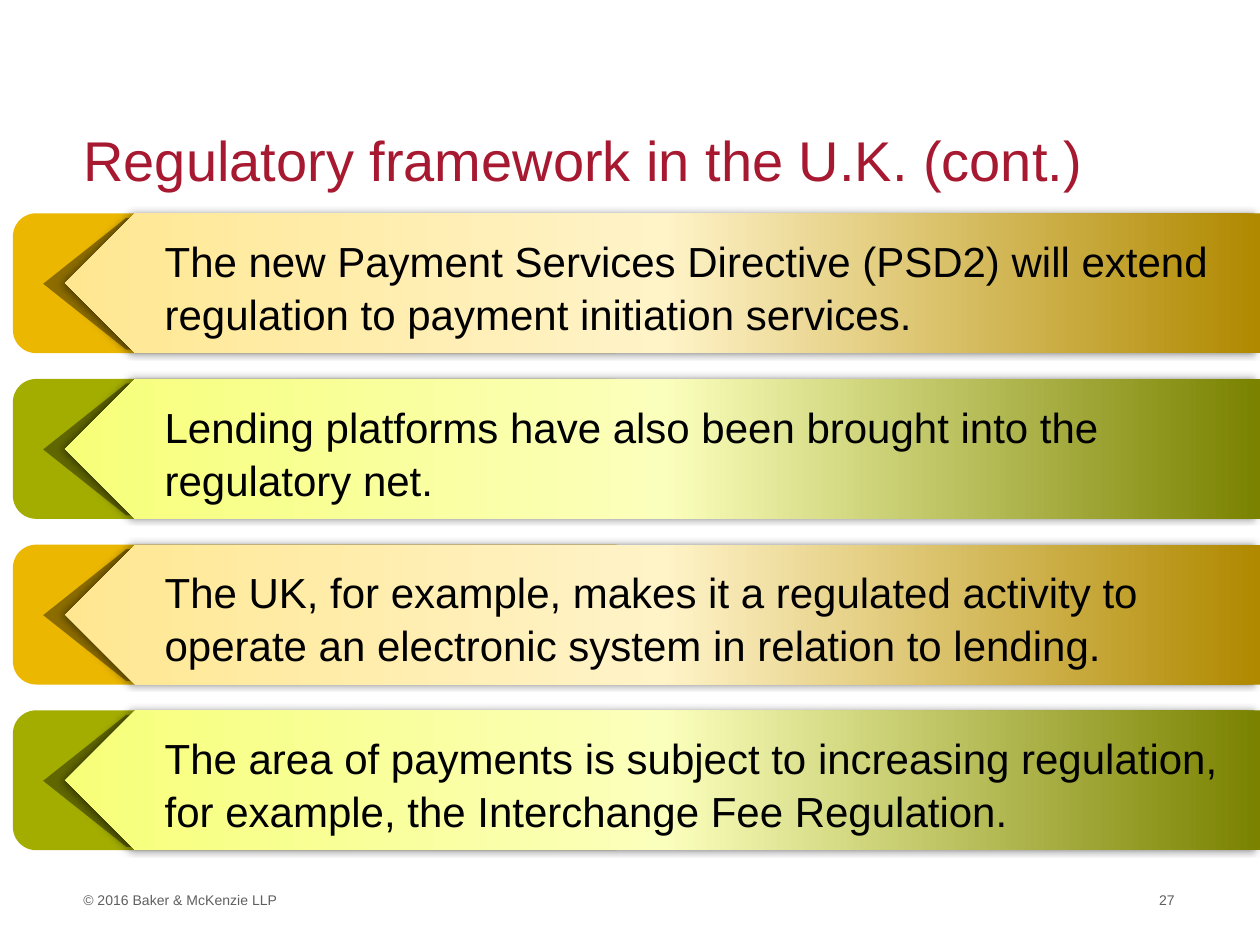
import pptx
import pptx.util
import pptx.dml.color
import pptx.enum.shapes
import pptx.enum.text
import pptx.oxml
import pptx.oxml.ns

Cm = pptx.util.Cm
Pt = pptx.util.Pt
RGBColor = pptx.dml.color.RGBColor
Shape = pptx.enum.shapes.MSO_SHAPE
Align = pptx.enum.text.PP_ALIGN
Anchor = pptx.enum.text.MSO_ANCHOR

CRIMSON = RGBColor(0xA7, 0x19, 0x30)
GREY = RGBColor(0x5F, 0x5F, 0x5F)
BLACK = RGBColor(0, 0, 0)
GOLD = RGBColor(0xEB, 0xB7, 0x00)
OLIVE = RGBColor(0xA3, 0xAD, 0x00)
GRADIENTS = {
    GOLD: (RGBColor(0xB0, 0x89, 0x00), RGBColor(0xFF, 0xF3, 0xC8), RGBColor(0xFF, 0xE7, 0x91)),
    OLIVE: (RGBColor(0x7A, 0x82, 0x00), RGBColor(0xFB, 0xFF, 0xBC), RGBColor(0xF7, 0xFF, 0x78)),
}

STATEMENTS = [
    "The new Payment Services Directive (PSD2) will extend regulation to payment initiation services.",
    "Lending platforms have also been brought into the regulatory net.",
    "The UK, for example, makes it a regulated activity to operate an electronic system in relation to lending.",
    "The area of payments is subject to increasing regulation, for example, the Interchange Fee Regulation.",
]
FIRST_TOP, ROW_PITCH, ROW_HEIGHT = 4.3, 3.34, 2.82


def write(frame, text, size=24, color=BLACK, align=Align.LEFT, spacing=1.0, inset=(0, 0), anchor=Anchor.TOP):
    """Put one formatted paragraph into a text frame."""
    frame.word_wrap = True
    frame.vertical_anchor = anchor
    frame.margin_left = frame.margin_right = Cm(inset[0])
    frame.margin_top = frame.margin_bottom = Cm(inset[1])
    para = frame.paragraphs[0]
    para.alignment = align
    para.line_spacing = spacing
    span = para.add_run()
    span.text = text
    span.font.name = "Arial"
    span.font.size = Pt(size)
    span.font.color.rgb = color


def parse_drawing(markup):
    """Turn DrawingML markup into an element."""
    namespace = pptx.oxml.ns.nsdecls("a")
    return pptx.oxml.parse_xml(markup.replace(">", f" {namespace}>", 1))


class Painter:
    """Draws the elements of one slide in a common style."""

    def __init__(self, deck):
        """Start a title-only slide."""
        self.page = deck.slides.add_slide(deck.slide_layouts[5])

    def title(self, text, *place):
        """Place and fill the title."""
        box = self.page.shapes.title
        box.left, box.top, box.width, box.height = map(Cm, place)
        write(box.text_frame, text, size=32, color=CRIMSON, anchor=Anchor.MIDDLE)

    def text(self, text, *place, **style):
        """Add a text box."""
        box = self.page.shapes.add_textbox(*map(Cm, place))
        write(box.text_frame, text, **style)

    def shape(self, group, kind, color, *place):
        """Add a plain filled shape to a group."""
        shape = group.shapes.add_shape(kind, *map(Cm, place))
        shape.shadow.inherit = False
        shape.fill.solid()
        shape.fill.fore_color.rgb = color
        shape.line.fill.background()
        return shape

    def notch(self, group, top):
        """Add the translucent dark arrow."""
        arrow = self.shape(group, Shape.PENTAGON, BLACK, 0.87, top + 0.09, 6.2, 2.66)
        arrow.rotation = 180
        arrow.adjustments[0] = 0.63
        color = arrow.fill._xPr.find(".//" + pptx.oxml.ns.qn("a:srgbClr"))
        color.append(parse_drawing('<a:alpha val="40000"></a:alpha>'))

    def ribbon(self, group, color, top):
        """Add the wide gradient arrow with its shadow."""
        arrow = self.shape(group, Shape.PENTAGON, color, 1.32, top, 24.08, ROW_HEIGHT)
        arrow.rotation = 180
        properties = arrow.fill._xPr
        stops = "".join(
            f'<a:gs pos="{position * 50000}"><a:srgbClr val="{stop}"/></a:gs>'
            for position, stop in enumerate(GRADIENTS[color])
        )
        gradient = parse_drawing(
            f'<a:gradFill rotWithShape="1"><a:gsLst>{stops}</a:gsLst><a:lin ang="0" scaled="0"/></a:gradFill>'
        )
        properties.replace(properties.find(pptx.oxml.ns.qn("a:solidFill")), gradient)
        shadow = parse_drawing(
            f'<a:outerShdw blurRad="{Pt(4)}" dist="{Pt(3)}" dir="10800000" rotWithShape="0">'
            '<a:srgbClr val="000000"><a:alpha val="40000"/></a:srgbClr></a:outerShdw>'
        )
        properties.find(pptx.oxml.ns.qn("a:effectLst")).append(shadow)

    def banner(self, text, color, top):
        """Add one grouped banner and its statement."""
        group = self.page.shapes.add_group_shape()
        self.shape(group, Shape.ROUNDED_RECTANGLE, color, 0.26, top, 12.6, ROW_HEIGHT)
        self.notch(group, top)
        self.ribbon(group, color, top)
        self.text(text, 3.07, top + 0.27, 22.05, 2.31, spacing=1.05, inset=(0.25, 0.13))


def main():
    """Build and save the slide."""
    deck = pptx.Presentation()
    deck.slide_width, deck.slide_height = Cm(25.4), Cm(19.05)
    painter = Painter(deck)
    painter.text("© 2016 Baker & McKenzie LLP", 1.68, 17.98, 20, 0.33, size=8, color=GREY)
    painter.text("27", 21.8, 17.98, 1.88, 0.5, size=8, color=GREY, align=Align.RIGHT)
    painter.title("Regulatory framework in the U.K. (cont.)", 1.68, 2.52, 22, 1.38)
    for row, statement in enumerate(STATEMENTS):
        painter.banner(statement, (GOLD, OLIVE)[row % 2], FIRST_TOP + row * ROW_PITCH)
    deck.save("out.pptx")


if __name__ == "__main__":
    main()
